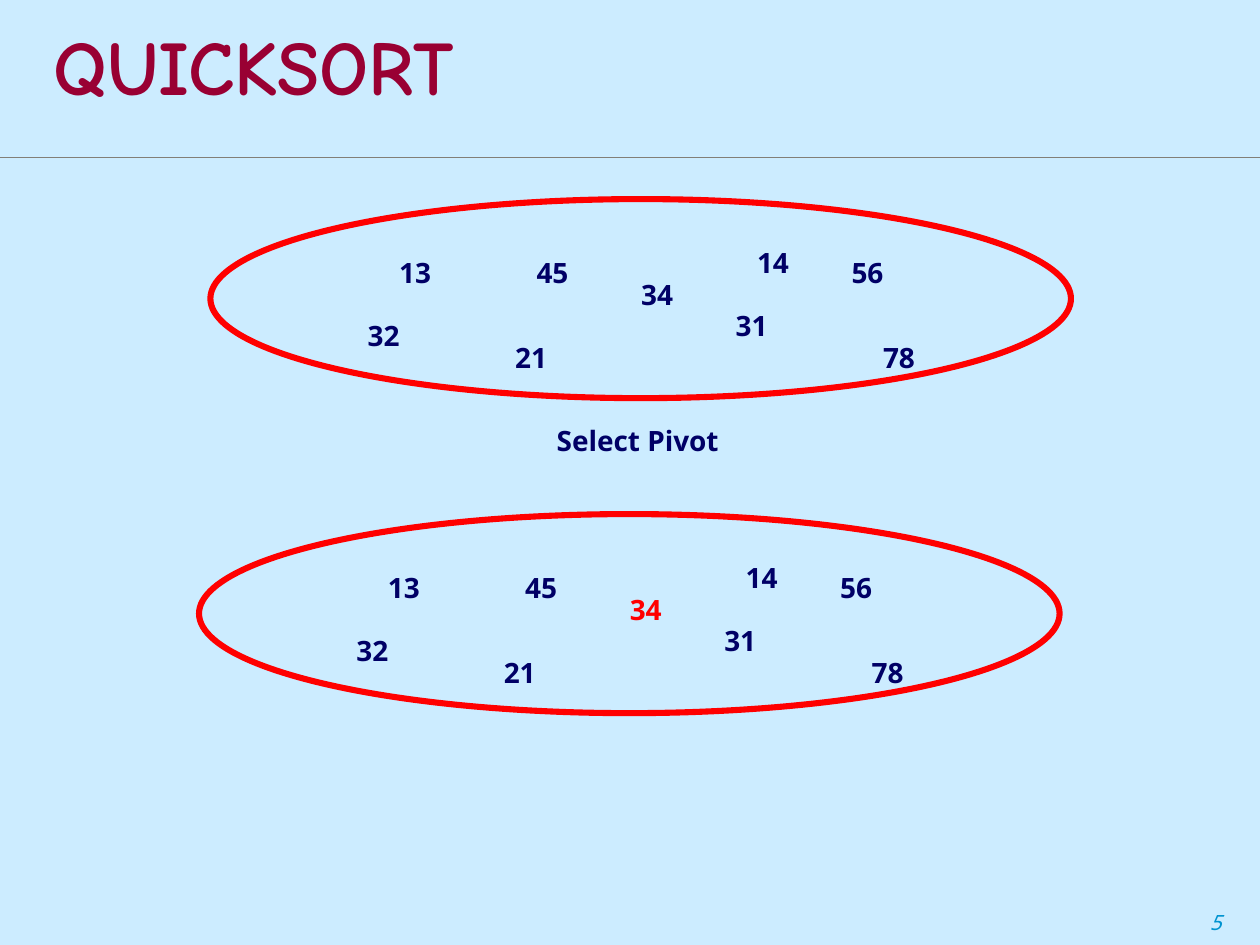
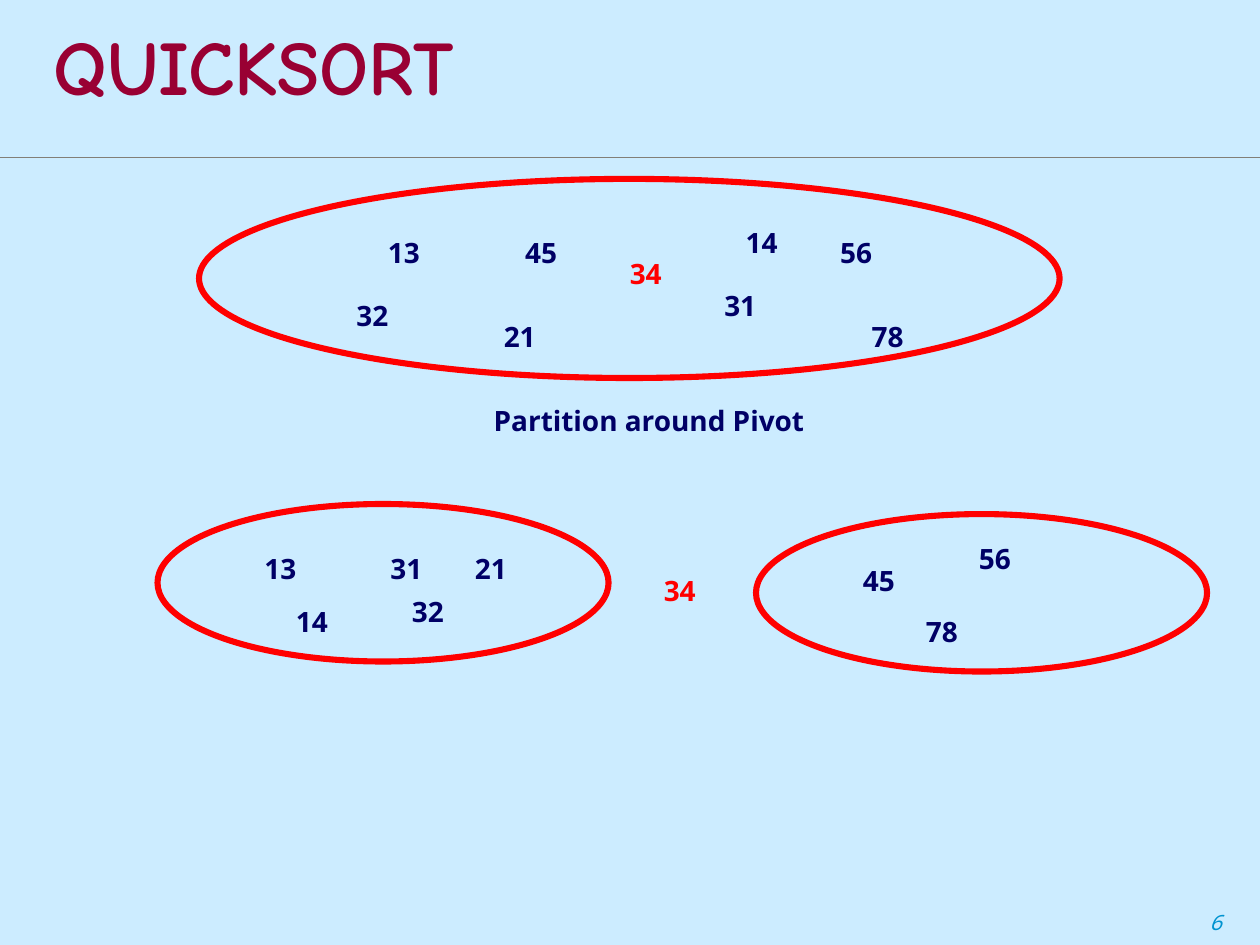
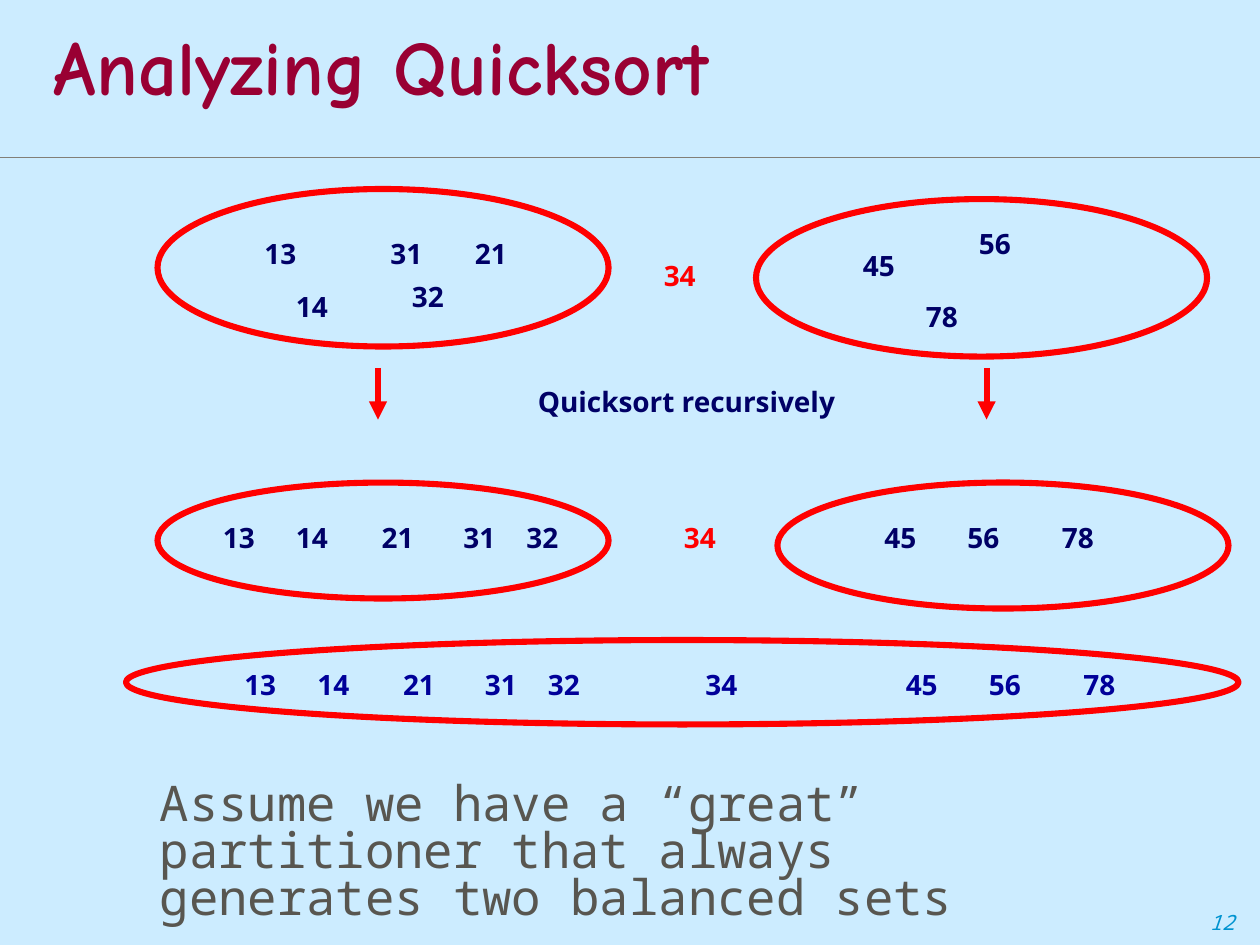
"""Build three slides that show how quicksort splits and sorts a set."""
from lxml.etree import SubElement as sub
from pptx import Presentation
from pptx.dml.color import RGBColor as RGB
from pptx.enum.shapes import MSO_CONNECTOR as CONN, MSO_SHAPE as SHAPE
from pptx.enum.text import MSO_ANCHOR as ANCHOR, MSO_AUTO_SIZE as AUTO
from pptx.oxml.ns import qn
from pptx.util import Inches, Pt

SKY, WINE, NAVY, BLUE = "CCECFF", "990033", "000066", "000099"
RED, CYAN, GREY, STONE = "FF0000", "0093D0", "827F77", "585650"
HAND, SANS, MONO = "Comic Neue", "Noto Sans", "Noto Sans Mono"
PIVOT = "34"

MIXED = {"13": (1.4, 0.4), "21": (2.32, 1.07), "34": (3.32, 0.57),
         "56": (4.99, 0.4), "32": (1.15, 0.9), "31": (4.07, 0.82),
         "45": (2.49, 0.4), "78": (5.24, 1.07), "14": (4.24, 0.32)}
SPLIT = {"13": (0.75, 0.33), "14": (1, 0.75), "21": (2.42, 0.33),
         "32": (1.92, 0.67), "31": (1.75, 0.33), "45": (5.5, 0.42),
         "56": (6.42, 0.25), "78": (6, 0.83), "34": (3.92, 0.5)}
SORTED = {"13": (0, 0), "14": (0.58, 0), "21": (1.26, 0), "31": (1.91, 0),
          "32": (2.41, 0), "34": (3.66, 0), "45": (5.25, 0),
          "56": (5.91, 0), "78": (6.66, 0)}


def color(code):
    """Turn a hex string into a colour."""
    return RGB.from_string(code)


def add_text(slide, box, text, font, size, code, bold=False, italic=False,
             wrap=True, grow=True, anchor=ANCHOR.TOP, gap=None):
    """Add a text box with one run and return its paragraph."""
    frame = slide.shapes.add_textbox(*map(Inches, box)).text_frame
    frame.word_wrap = wrap
    frame.auto_size = AUTO.SHAPE_TO_FIT_TEXT if grow else AUTO.NONE
    frame.vertical_anchor = anchor
    para = frame.paragraphs[0]
    para.line_spacing = gap
    run = para.add_run()
    run.text = text
    face = run.font
    face.name, face.size, face.bold, face.italic = font, Pt(size), bold, italic
    face.color.rgb = color(code)
    return para


def add_label(slide, left, top, text, code=NAVY, width=0.49):
    """Add a bold number or caption."""
    add_text(slide, (left, top, width, 0.37), text, SANS, 16, code,
             bold=True, wrap=False)


def add_ring(slide, left, top, width, height):
    """Add a red ellipse without fill."""
    ring = slide.shapes.add_shape(
        SHAPE.OVAL, *map(Inches, (left, top, width, height)))
    ring.shadow.inherit = False
    ring.fill.background()
    ring.line.color.rgb = color(RED)
    ring.line.width = Pt(3.5)


def add_line(slide, ends, code, width, arrow=False):
    """Add a straight line, with an arrowhead if asked."""
    line = slide.shapes.add_connector(CONN.STRAIGHT, *map(Inches, ends))
    line.line.color.rgb = color(code)
    line.line.width = Pt(width)
    if arrow:
        sub(line.line._get_or_add_ln(), qn("a:tailEnd"), type="triangle")
    sub(line._element.spPr, qn("a:effectLst"))


def add_nums(slide, left, top, spots, hue=RED, code=NAVY, wide=0.56):
    """Place numbers at their offsets and mark the pivot."""
    for num, (dx, dy) in spots.items():
        mark = num == PIVOT
        add_label(slide, left + dx, top + dy, num, hue if mark else code,
                  wide if mark else 0.49)


def add_mixed(slide, left, top, hue=RED):
    """Add the unsorted set in its ring."""
    add_ring(slide, left, top, 6.83, 1.58)
    add_nums(slide, left, top, MIXED, hue, wide=0.49)


def add_split(slide, top):
    """Add the two parts on either side of the pivot."""
    add_ring(slide, 1.25, top, 3.58, 1.25)
    add_ring(slide, 6, top + 0.08, 3.58, 1.25)
    add_nums(slide, 1.25, top, SPLIT)


def add_page(deck, title, num):
    """Add a slide with its ground, page number, rule and title."""
    slide = deck.slides.add_slide(deck.slide_layouts[6])
    fill = slide.background.fill
    fill.solid()
    fill.fore_color.rgb = color(SKY)
    foot = add_text(slide, (0, 7.17, 10, 0.3), f"\t\t{num}", MONO, 12, CYAN,
                    italic=True, anchor=ANCHOR.BOTTOM)
    tabs = sub(foot._p.get_or_add_pPr(), qn("a:tabLst"))
    for pos, side in ((4.87, "ctr"), (9.5, "l"), (10, "l")):
        sub(tabs, qn("a:tab"), pos=str(Inches(pos)), algn=side)
    add_line(slide, (0, 1.25, 10, 1.25), GREY, 0.75)
    add_text(slide, (0.33, 0.07, 9.67, 1), title, HAND, 44, WINE, bold=True,
             grow=False, anchor=ANCHOR.MIDDLE, gap=0.86)
    return slide


def draw_pick(deck):
    """Show the choice of the pivot."""
    slide = add_page(deck, "QUICKSORT", 5)
    add_mixed(slide, 1.67, 1.58, NAVY)
    add_label(slide, 4.32, 3.31, "Select Pivot", width=1.52)
    add_mixed(slide, 1.58, 4.08)


def draw_parts(deck):
    """Show the partition around the pivot."""
    slide = add_page(deck, "QUICKSORT", 6)
    add_mixed(slide, 1.58, 1.42)
    add_label(slide, 3.82, 3.15, "Partition around Pivot", width=2.71)
    add_split(slide, 4)


def draw_sort(deck):
    """Show the recursive sort and the joined result."""
    slide = add_page(deck, "Analyzing Quicksort", 12)
    add_split(slide, 1.5)
    for left in (3, 7.83):
        add_line(slide, (left, 2.92, left, 3.33), RED, 3.5, arrow=True)
    add_label(slide, 4.17, 3, "Quicksort recursively", width=2.65)
    add_ring(slide, 1.25, 3.83, 3.58, 0.92)
    add_ring(slide, 6.17, 3.83, 3.58, 1)
    add_nums(slide, 1.67, 4.08, SORTED)
    add_nums(slide, 1.84, 5.25, SORTED, BLUE, BLUE)
    add_ring(slide, 1, 5.08, 8.83, 0.67)
    add_text(slide, (1.17, 6.17, 7.83, 0.85),
             "Assume we have a “great” partitioner that always "
             "generates two balanced sets", MONO, 28, STONE, gap=0.8)


def main():
    """Build and save the deck."""
    deck = Presentation()
    deck.slide_width, deck.slide_height = Inches(10), Inches(7.5)
    draw_pick(deck)
    draw_parts(deck)
    draw_sort(deck)
    deck.save("out.pptx")


if __name__ == "__main__":
    main()
